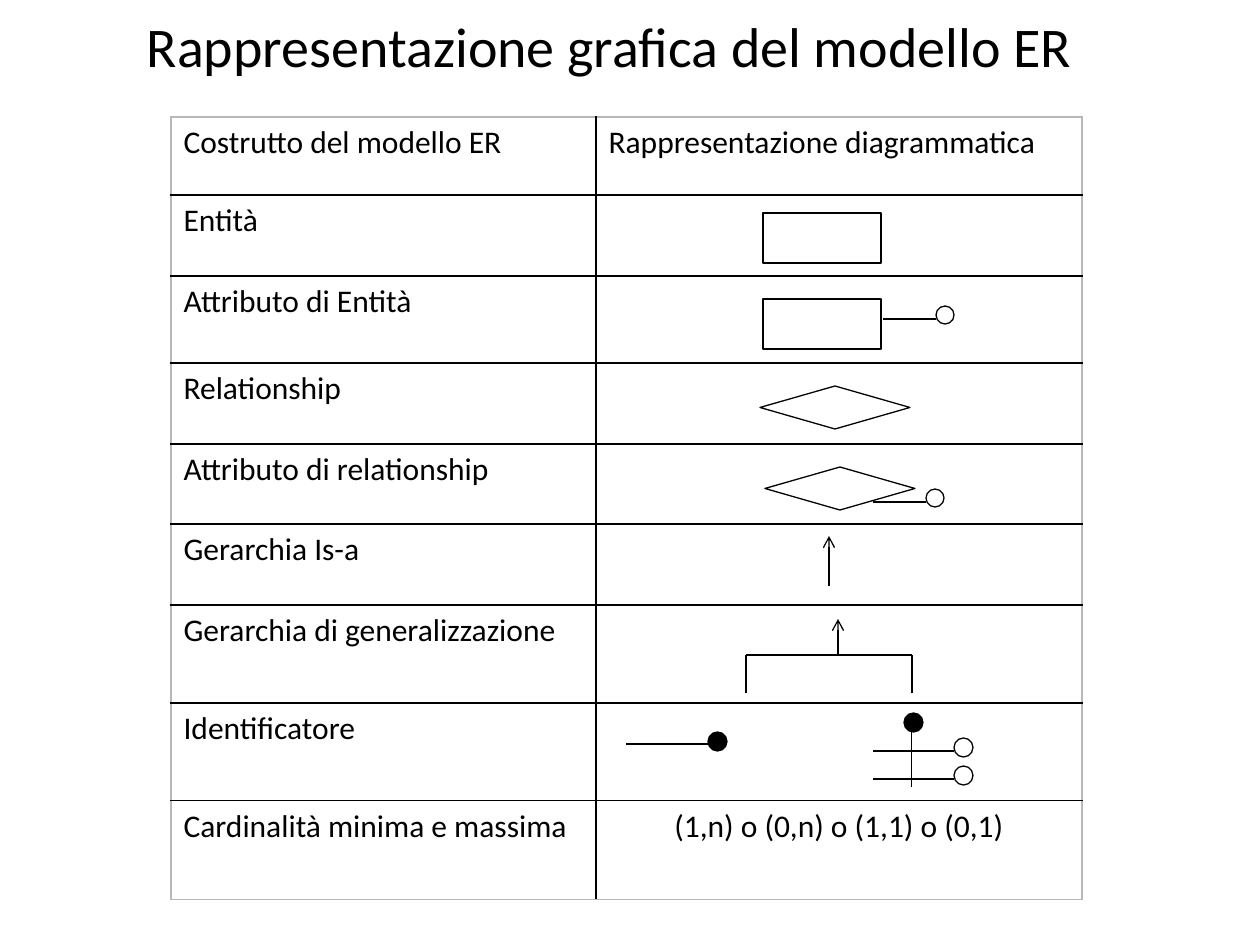
from lxml import etree
from pptx import Presentation
from pptx import util as u
from pptx.dml.color import RGBColor
from pptx.enum import shapes, text
from pptx.oxml import ns

PX = 914400 / 126
BLACK = RGBColor(0x00, 0x00, 0x00)
WHITE = RGBColor(0xFF, 0xFF, 0xFF)
GREY = RGBColor(0xB8, 0xB8, 0xB8)
KIND = shapes.MSO_SHAPE


def px(*lengths):
    return [u.Emu(round(length * PX)) for length in lengths]


def format_text(paragraph, values):
    for name, value in values.items():
        setattr(paragraph.font, name, value)
    paragraph.font.color.rgb = BLACK


presentation = Presentation()
presentation.slide_width, presentation.slide_height = px(1260, 945)
slide = presentation.slides.add_slide(presentation.slide_layouts[5])

# Title
title = slide.shapes.title
title.left, title.top, title.width, title.height = px(16, 11, 1187, 76)
title.text_frame.text = "Rappresentazione grafica del modello ER"
title.text_frame.vertical_anchor = text.MSO_ANCHOR.MIDDLE
paragraph = title.text_frame.paragraphs[0]
paragraph.alignment = text.PP_ALIGN.CENTER
paragraph.line_spacing = 0.9
format_text(paragraph, {"name": "Calibri", "size": u.Pt(32)})

# Table of constructs
rows = [
    ("Costrutto del modello ER", "Rappresentazione diagrammatica", 78),
    ("Entità", "", 81),
    ("Attributo di Entità", "", 87),
    ("Relationship", "", 81),
    ("Attributo di relationship", "", 80),
    ("Gerarchia Is-a", "", 81),
    ("Gerarchia di generalizzazione", "", 98),
    ("Identificatore", "", 98),
    ("Cardinalità minima e massima", "(1,n) o (0,n) o (1,1) o (0,1)", 99),
]
column_widths = px(425, 486)
height = sum(row[2] for row in rows)
table = slide.shapes.add_table(len(rows), 2, *px(171, 117, 911, height)).table
table.first_row = table.horz_banding = False
for column, width in zip(table.columns, column_widths):
    column.width = width
last = len(rows) - 1
for row_index, (construct, notation, row_height) in enumerate(rows):
    table.rows[row_index].height = px(row_height)[0]
    for column_index, words in enumerate((construct, notation)):
        cell = table.cell(row_index, column_index)
        cell.text = words
        paragraph = cell.text_frame.paragraphs[0]
        format_text(paragraph, {"name": "Calibri", "size": u.Pt(18)})
        if row_index == last and column_index == 1:
            paragraph.alignment = text.PP_ALIGN.CENTER
        # Grey outer frame, black inner rules
        outer = {"lnL": column_index == 0, "lnR": column_index == 1,
                 "lnT": row_index == 0, "lnB": row_index == last}
        properties = cell._tc.get_or_add_tcPr()
        for side, is_outer in outer.items():
            border = etree.SubElement(properties, ns.qn("a:" + side), w=str(u.Pt(1)))
            fill = etree.SubElement(border, ns.qn("a:solidFill"))
            etree.SubElement(fill, ns.qn("a:srgbClr"), val=str(GREY if is_outer else BLACK))
        cell.fill.background()

# Grouped symbols share a parent
entity_attribute = slide.shapes.add_group_shape().shapes
generalization = slide.shapes.add_group_shape().shapes
relationship_attribute = slide.shapes.add_group_shape().shapes

# Lines: parent, start, end, width in points, arrow
lines = [
    (entity_attribute, (883, 319), (936, 319), 0.75, False),
    (slide.shapes, (829, 586), (829, 536), 0.75, True),
    (generalization, (838, 655), (838, 619), 0.75, True),
    (generalization, (912, 655), (746, 655), 0.75, False),
    (generalization, (912, 693), (912, 655), 0.75, False),
    (generalization, (746, 693), (746, 655), 0.75, False),
    (slide.shapes, (626, 744), (708, 744), 0.75, False),
    (relationship_attribute, (873, 502), (926, 502), 0.75, False),
    (slide.shapes, (873, 751), (954, 751), 0.75, False),
    (slide.shapes, (873, 779), (954, 779), 0.75, False),
    (slide.shapes, (911, 732), (911, 787), 0.5, False),
]
for parent, start, end, width, arrow in lines:
    connector = parent.add_connector(shapes.MSO_CONNECTOR.STRAIGHT, *px(*start, *end))
    connector.line.color.rgb = BLACK
    connector.line.width = u.Pt(width)
    if arrow:
        etree.SubElement(connector.line._get_or_add_ln(), ns.qn("a:tailEnd"), type="arrow")
    etree.SubElement(connector._element.spPr, ns.qn("a:effectLst"))

# Symbols: parent, kind, left, top, width, height, fill, line width in points
symbols = [
    (slide.shapes, KIND.RECTANGLE, 763, 213, 118, 50, None, 1),
    (slide.shapes, KIND.RECTANGLE, 763, 299, 118, 50, None, 1),
    (entity_attribute, KIND.OVAL, 936, 306, 18, 18, None, 0.75),
    (slide.shapes, KIND.DIAMOND, 760, 386, 150, 43, None, 0.75),
    (slide.shapes, KIND.DIAMOND, 765, 467, 150, 43, None, 0.75),
    (relationship_attribute, KIND.OVAL, 926, 489, 18, 18, None, 0.75),
    (slide.shapes, KIND.OVAL, 708, 732, 19, 19, BLACK, 0.75),
    (slide.shapes, KIND.OVAL, 954, 738, 19, 19, WHITE, 0.75),
    (slide.shapes, KIND.OVAL, 954, 766, 19, 19, WHITE, 0.75),
    (slide.shapes, KIND.OVAL, 904, 713, 19, 19, BLACK, 0.75),
]
for parent, kind, left, top, width, height, color, line_width in symbols:
    shape = parent.add_shape(kind, *px(left, top, width, height))
    shape.shadow.inherit = False
    shape.line.color.rgb = BLACK
    shape.line.width = u.Pt(line_width)
    if color is None:
        shape.fill.background()
    else:
        shape.fill.solid()
        shape.fill.fore_color.rgb = color

presentation.save("out.pptx")
